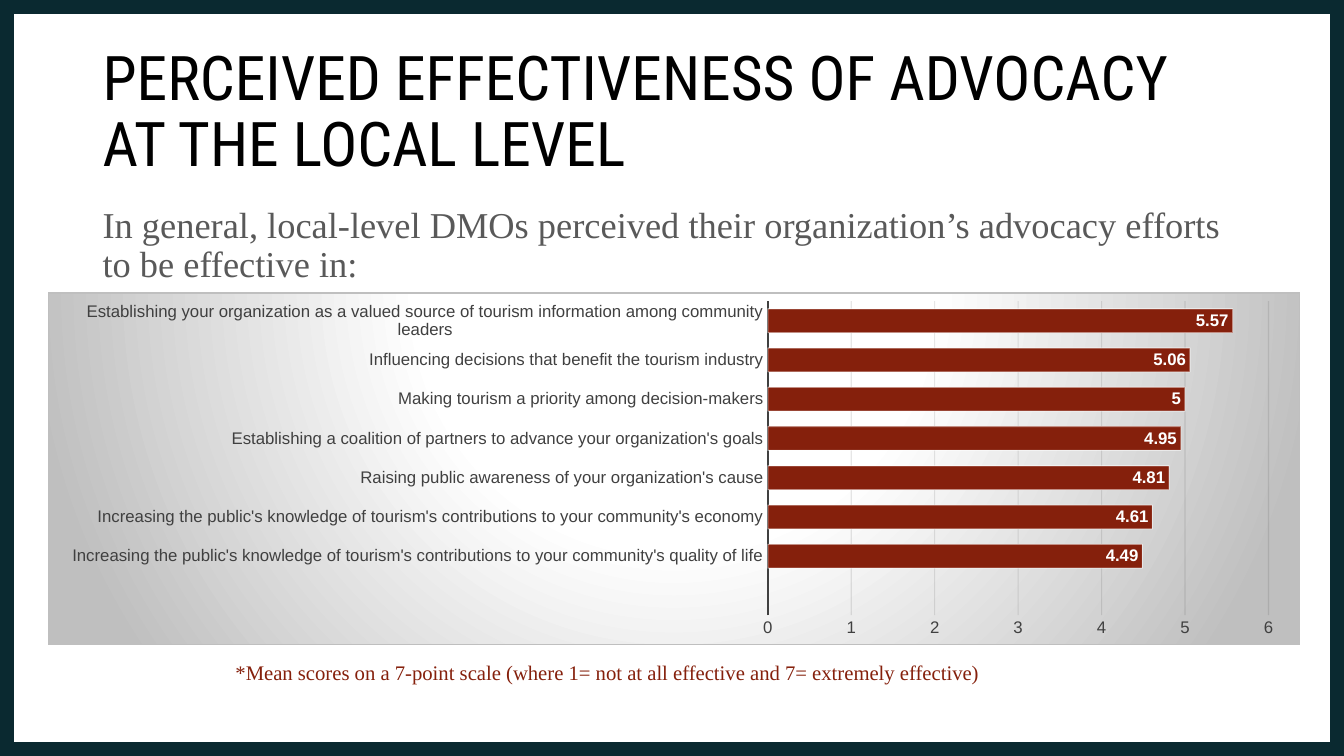
import pptx
import pptx.chart.data
import pptx.dml.color
import pptx.enum.chart
import pptx.enum.shapes
import pptx.enum.text
import pptx.oxml
import pptx.oxml.ns
import pptx.util

Cm, Pt = pptx.util.Cm, pptx.util.Pt
MID = pptx.enum.text.MSO_ANCHOR.MIDDLE
TOP = pptx.enum.text.MSO_ANCHOR.TOP
LEFT = pptx.enum.text.PP_ALIGN.LEFT
CENTER = pptx.enum.text.PP_ALIGN.CENTER

HUES = {"frame": "0A2930", "black": "000000", "body": "595959",
        "red": "85200C", "axis": "404040", "grid": "0D0D0D",
        "white": "FFFFFF", "gray": "BFBFBF"}

TITLE = "PERCEIVED EFFECTIVENESS OF ADVOCACY AT THE LOCAL LEVEL"
LEAD = ("In general, local-level DMOs perceived their organization’s "
        "advocacy efforts to be effective in:")
NOTE = ("*Mean scores on a 7-point scale (where 1= not at all effective "
        "and 7= extremely effective)")
SCORES = [
    ("", None),
    ("Increasing the public's knowledge of tourism's contributions to your "
     "community's quality of life", 4.49),
    ("Increasing the public's knowledge of tourism's contributions to your "
     "community's economy", 4.61),
    ("Raising public awareness of your organization's cause", 4.81),
    ("Establishing a coalition of partners to advance your organization's "
     "goals", 4.95),
    ("Making tourism a priority among decision-makers", 5),
    ("Influencing decisions that benefit the tourism industry", 5.06),
    ("Establishing your organization as a valued source of tourism "
     "information among community leaders", 5.57),
]
WIDE, HIGH = Cm(33.87), Cm(19.05)
SPOTS = {"title": (2.33, 1.02, 29.21, 3.68),
         "lead": (2.33, 5.08, 29.21, 11.1),
         "chart": (1.2, 7.37, 31.57, 8.89),
         "note": (5.49, 16.46, 19.63, 1.04)}
PLOT = {"x": 0.575, "y": 0.023, "w": 0.4, "h": 0.893}
STOPS = [(0, "white"), (39, "white"), (100, "gray")]


def tint(name):
    return pptx.dml.color.RGBColor.from_string(HUES[name])


def place(name):
    return [Cm(n) for n in SPOTS[name]]


def style(font, size, hue, face="Arial", bold=False):
    font.size, font.name, font.bold = Pt(size), face, bold
    font.color.rgb = tint(hue)


def write(shape, text, size, hue, face, align=LEFT, anchor=TOP):
    frame = shape.text_frame
    frame.word_wrap = True
    frame.auto_size = pptx.enum.text.MSO_AUTO_SIZE.NONE
    frame.vertical_anchor = anchor
    frame.text = text
    para = frame.paragraphs[0]
    props = para._p.get_or_add_pPr()
    props.set("marL", "0")
    props.set("indent", "0")
    props.append(props.makeelement(pptx.oxml.ns.qn("a:buNone"), {}))
    para.alignment = align
    para.line_spacing = 0.9
    para.space_before = Pt(0)
    style(para.runs[0].font, size, hue, face)


def stroke(line, hue, width):
    line.color.rgb = tint(hue)
    line.width = Pt(width)


def parse_xml(tag, inner):
    spaces = pptx.oxml.ns.nsdecls("c", "a")
    return pptx.oxml.parse_xml(f"<{tag} {spaces}>{inner}</{tag}>")


def fade(root, query, share):
    for node in root.xpath(query):
        alpha = node.makeelement(pptx.oxml.ns.qn("a:alpha"),
                                 {"val": str(share * 1000)})
        node.append(alpha)


def backdrop(root):
    stops = "".join(f'<a:gs pos="{spot * 1000}"><a:srgbClr val="{HUES[hue]}"/>'
                    "</a:gs>" for spot, hue in STOPS)
    fill = (f'<a:gradFill><a:gsLst>{stops}</a:gsLst><a:path path="circle">'
            '<a:fillToRect l="50000" t="-80000" r="50000" b="180000"/>'
            "</a:path></a:gradFill>")
    edge = (f'<a:ln w="{Pt(0.75)}"><a:solidFill>'
            f'<a:srgbClr val="{HUES["gray"]}"/></a:solidFill></a:ln>')
    root.xpath("c:txPr")[0].addprevious(parse_xml("c:spPr", fill + edge))


def arrange(root):
    area = root.xpath("c:chart/c:plotArea")[0]
    for old in area.xpath("c:layout"):
        area.remove(old)
    modes = "".join(f'<c:{k}Mode val="edge"/>' for k in "xy")
    sizes = "".join(f'<c:{k} val="{v}"/>' for k, v in PLOT.items())
    area.insert(0, parse_xml("c:layout", '<c:manualLayout><c:layoutTarget '
                             f'val="inner"/>{modes}{sizes}</c:manualLayout>'))


def draw_chart(slide):
    kinds = pptx.enum.chart
    data = pptx.chart.data.CategoryChartData()
    data.categories = [label for label, score in SCORES]
    data.add_series("Series 1", [score for label, score in SCORES])
    chart = slide.shapes.add_chart(kinds.XL_CHART_TYPE.BAR_CLUSTERED,
                                   *place("chart"), data).chart
    chart.has_legend = chart.has_title = False
    style(chart.font, 10, "black")

    cats, vals = chart.category_axis, chart.value_axis
    for axis in (cats, vals):
        axis.major_tick_mark = axis.minor_tick_mark = kinds.XL_TICK_MARK.NONE
        style(axis.tick_labels.font, 12, "axis")
    stroke(cats.format.line, "axis", 1.5)
    vals.format.line.fill.background()
    vals.minimum_scale, vals.maximum_scale, vals.major_unit = 0, 6, 1
    vals.has_major_gridlines = True
    stroke(vals.major_gridlines.format.line, "grid", 0.75)

    plot = chart.plots[0]
    plot.gap_width = 65
    plot.vary_by_categories = False
    bars = plot.series[0]
    bars.format.fill.solid()
    bars.format.fill.fore_color.rgb = tint("red")
    stroke(bars.format.line, "white", 0.75)
    marks = bars.data_labels
    marks.show_value = True
    marks.position = kinds.XL_LABEL_POSITION.INSIDE_END
    style(marks.font, 12, "white", bold=True)

    root = chart.element
    fade(root, "//c:majorGridlines//a:srgbClr", 10)
    fade(root, "//c:ser/c:spPr/a:ln//a:srgbClr", 50)
    backdrop(root)
    arrange(root)


def main():
    deck = pptx.Presentation()
    deck.slide_width, deck.slide_height = WIDE, HIGH
    slide = deck.slides.add_slide(deck.slide_layouts[1])
    slide.background.fill.solid()
    slide.background.fill.fore_color.rgb = tint("white")

    frame = slide.shapes.add_shape(pptx.enum.shapes.MSO_SHAPE.RECTANGLE,
                                   0, 0, WIDE, HIGH)
    frame.shadow.inherit = False
    frame.fill.background()
    stroke(frame.line, "frame", 20.25)
    slide.shapes.title.element.addprevious(frame.element)

    title, lead = slide.shapes.title, slide.placeholders[1]
    for shape, name in ((title, "title"), (lead, "lead")):
        shape.left, shape.top, shape.width, shape.height = place(name)
    write(title, TITLE, 44, "black", "Roboto Condensed", anchor=MID)
    write(lead, LEAD, 26, "body", "Times New Roman")
    draw_chart(slide)
    note = slide.shapes.add_textbox(*place("note"))
    write(note, NOTE, 14.8, "red", "Times New Roman", CENTER, MID)
    deck.save("out.pptx")


if __name__ == "__main__":
    main()
